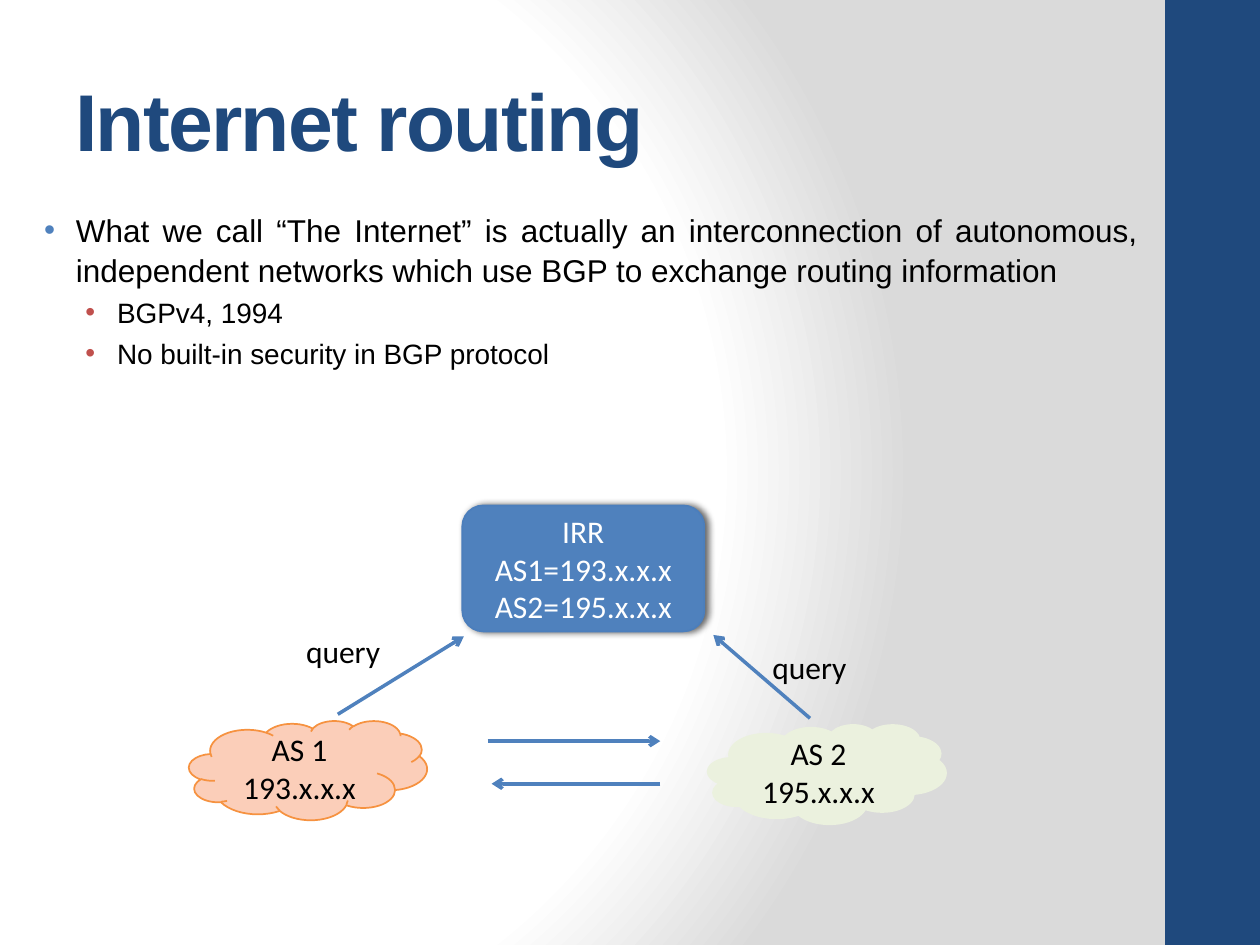
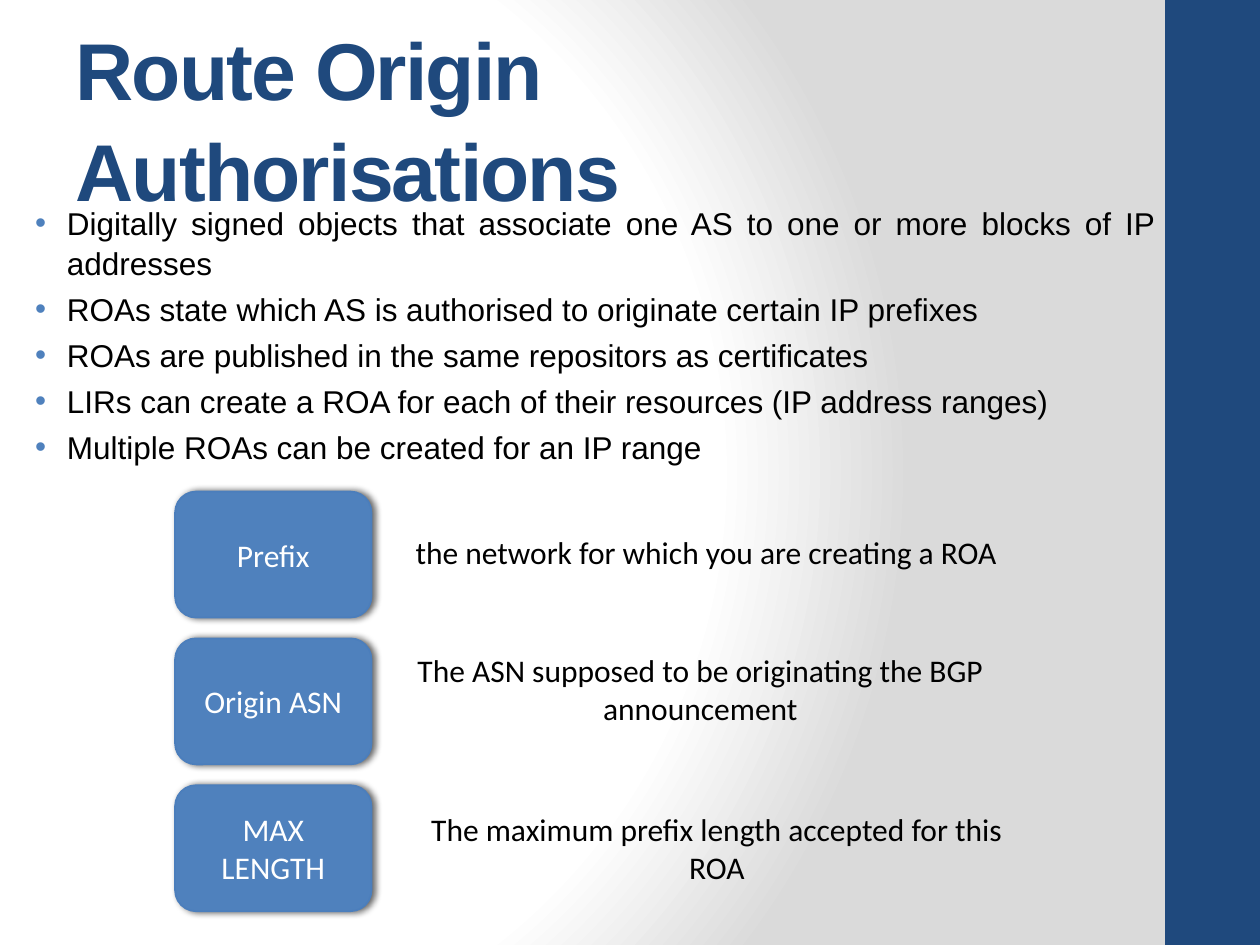
from lxml.etree import SubElement as Sub
from pptx import Presentation
from pptx.dml.color import RGBColor
from pptx.enum.shapes import MSO_CONNECTOR as Link, MSO_SHAPE as Kind
from pptx.enum.text import MSO_ANCHOR as Anchor, PP_ALIGN as Align
from pptx.oxml import parse_xml
from pptx.oxml.ns import nsdecls, qn
from pptx.util import Cm, Pt

NAVY = RGBColor(0x1F, 0x49, 0x7D)
BLUE = RGBColor(0x4F, 0x81, 0xBD)
EDGE = RGBColor(0x4B, 0x7E, 0xBC)
RED = RGBColor(0xC0, 0x50, 0x4D)
PEACH = RGBColor(0xFB, 0xCE, 0xB9)
ORANGE = RGBColor(0xF6, 0x92, 0x40)
GREEN = RGBColor(0xEB, 0xF1, 0xDE)
GREY = RGBColor(0xDA, 0xDA, 0xDA)
WHITE = RGBColor(0xFF, 0xFF, 0xFF)
BLACK = RGBColor(0, 0, 0)

WIDE, HIGH = 25.4, 19.05
BAND = 1.91
# size, left indent, bullet colour of each level
LEVELS = [(18, 0.95, BLUE), (16, 1.78, RED)]
HANG = 0.64


def cms(*values):
    return [Cm(v) for v in values]


def style(para, size, color, face="Calibri", align=Align.CENTER):
    para.alignment = align
    font = para.font
    font.size, font.name, font.color.rgb = Pt(size), face, color


def write(shape, lines, color=BLACK, align=Align.CENTER):
    frame = shape.text_frame
    frame.text = "\n".join(lines)
    for para in frame.paragraphs:
        style(para, 18, color, align=align)


def label(slide, box, text, wrap=True, align=Align.CENTER):
    shape = slide.shapes.add_textbox(*cms(*box))
    shape.text_frame.word_wrap = wrap
    write(shape, [text], align=align)


def block(slide, kind, box, lines, fill, edge, color=BLACK):
    shape = slide.shapes.add_shape(kind, *cms(*box))
    shape.shadow.inherit = False
    shape.fill.solid()
    shape.fill.fore_color.rgb = fill
    shape.line.color.rgb = edge
    shape.line.width = Pt(1)
    shape.text_frame.vertical_anchor = Anchor.MIDDLE
    write(shape, lines, color)
    return shape


def card(slide, box, *lines):
    """Blue rounded box with a soft shadow on its right."""
    shape = block(slide, Kind.ROUNDED_RECTANGLE, box, lines, BLUE, EDGE, WHITE)
    effects = shape.element.spPr.find(qn("a:effectLst"))
    shade = Sub(effects, qn("a:outerShdw"), blurRad=str(Pt(4)),
                dist=str(Pt(2)), dir="0", rotWithShape="0")
    tint = Sub(shade, qn("a:srgbClr"), val=str(BLACK))
    Sub(tint, qn("a:alpha"), val="60000")


def arrow(slide, start, end):
    line = slide.shapes.add_connector(Link.STRAIGHT, *cms(*start, *end))
    line.line.color.rgb = BLUE
    line.line.width = Pt(2)
    Sub(line.line._get_or_add_ln(), qn("a:tailEnd"), type="arrow")
    Sub(line.element.spPr, qn("a:effectLst"))


def backdrop(master):
    """Radial white to grey background for all slides."""
    stops = "".join(
        f'<a:gs pos="{pos}000"><a:srgbClr val="{color}"/></a:gs>'
        for pos, color in [(0, WHITE), (75, WHITE), (100, GREY)])
    grad = parse_xml(
        f'<a:gradFill {nsdecls("a")} rotWithShape="1"><a:gsLst>{stops}</a:gsLst>'
        '<a:path path="circle"><a:fillToRect l="20000" t="50000" '
        'r="100000" b="50000"/></a:path></a:gradFill>')
    master.background.fill.solid()
    solid = next(master.element.iter(qn("p:bgPr")))[0]
    solid.getparent().replace(solid, grad)


def page(deck, title):
    """New slide with the side band and its title."""
    slide = deck.slides.add_slide(deck.slide_layouts[6])
    block(slide, Kind.RECTANGLE, (WIDE - BAND, 0, BAND, HIGH), [],
          NAVY, NAVY).line.fill.background()
    frame = slide.shapes.add_textbox(*cms(1.27, 0.76, 21.16, 3.18)).text_frame
    frame.word_wrap = True
    frame.vertical_anchor = Anchor.MIDDLE
    frame.text = title
    para = frame.paragraphs[0]
    style(para, 46, NAVY, "Arial", Align.LEFT)
    para.font.bold = True
    para.line_spacing = 1.05
    para.runs[0].font._element.set("spc", "-100")
    return slide


def bullets(slide, box, items):
    frame = slide.shapes.add_textbox(*cms(*box)).text_frame
    frame.word_wrap = True
    frame.text = "\n".join(text for _, text in items)
    for para, (level, _) in zip(frame.paragraphs, items):
        size, left, color = LEVELS[level]
        style(para, size, BLACK, "Arial", Align.JUSTIFY)
        para.level = level
        para.line_spacing = 1.05
        para.space_before = Pt(size * 0.2)
        props = para._p.get_or_add_pPr()
        props.set("marL", str(Cm(left)))
        props.set("indent", str(-Cm(HANG)))
        mark = parse_xml(f'<a:buClr {nsdecls("a")}><a:srgbClr val="{color}"/></a:buClr>')
        face = parse_xml(f'<a:buFont {nsdecls("a")} typeface="Arial"/>')
        dot = parse_xml(f'<a:buChar {nsdecls("a")} char="•"/>')
        spot = props.index(props.find(qn("a:defRPr")))
        props[spot:spot] = [mark, face, dot]


def network(slide, left, top):
    """Two networks that exchange routes and query the registry."""
    def at(x, y, *size):
        return (left + x, top + y, *size)

    for x, y, name, net, fill, edge in [
            (0, 4.34, "AS 1", "193.x.x.x", PEACH, ORANGE),
            (10.46, 4.42, "AS 2", "195.x.x.x", GREEN, GREEN)]:
        block(slide, Kind.CLOUD, at(x, y, 4.8, 2), [name, net], fill, edge)
    for start, end in [((6.02, 4.75), (9.5, 4.75)), ((9.5, 5.61), (6.1, 5.61)),
                       ((3, 4.21), (5.54, 2.64)), ((12.52, 4.29), (10.57, 2.61))]:
        arrow(slide, at(*start), at(*end))
    card(slide, at(5.51, 0, 4.88, 2.54), "IRR", "AS1=193.x.x.x", "AS2=195.x.x.x")
    for x, y in [(11.51, 2.74), (2.11, 2.43)]:
        label(slide, at(x, y, 2.03, 1.02), "query", False, Align.LEFT)


def fields(slide, left, top, pitch, rows):
    """Cards in a column, each with its meaning on the right."""
    for i, (name, text, (x, y, w, h), wrap) in enumerate(rows):
        row = top + i * pitch
        card(slide, (left, row, 3.96, 2.54), name)
        label(slide, (left + x, row + y, w, h), text, wrap)


def routing(deck):
    slide = page(deck, "Internet routing")
    bullets(slide, (0.33, 4.09, 22.86, 3.96), [
        (0, "What we call “The Internet” is actually an interconnection of "
            "autonomous, independent networks which use BGP to exchange "
            "routing information"),
        (1, "BGPv4, 1994"),
        (1, "No built-in security in BGP protocol")])
    network(slide, 3.81, 10.19)


def origins(deck):
    slide = page(deck, "Route Origin Authorisations")
    bullets(slide, (0.15, 3.95, 23.39, 5.13), [(0, text) for text in (
        "Digitally signed objects that associate one AS to one or more "
        "blocks of IP addresses",
        "ROAs state which AS is authorised to originate certain IP prefixes",
        "ROAs are published in the same repositors as certificates",
        "LIRs can create a ROA for each of their resources (IP address ranges)",
        "Multiple ROAs can be created for an IP range")])
    fields(slide, 3.53, 9.91, 2.96, [
        ("Prefix", "the network for which you are creating a ROA",
         (4.5, 0.71, 12.42, 1.02), False),
        ("Origin ASN", "The ASN supposed to be originating the BGP announcement",
         (4.24, 0.13, 12.7, 1.8), True),
        ("MAX LENGTH", "The maximum prefix length accepted for this ROA",
         (4.57, 0.38, 12.7, 1.8), True)])


def main():
    deck = Presentation()
    deck.slide_width, deck.slide_height = cms(WIDE, HIGH)
    backdrop(deck.slide_master)
    routing(deck)
    origins(deck)
    deck.save("out.pptx")


if __name__ == "__main__":
    main()
